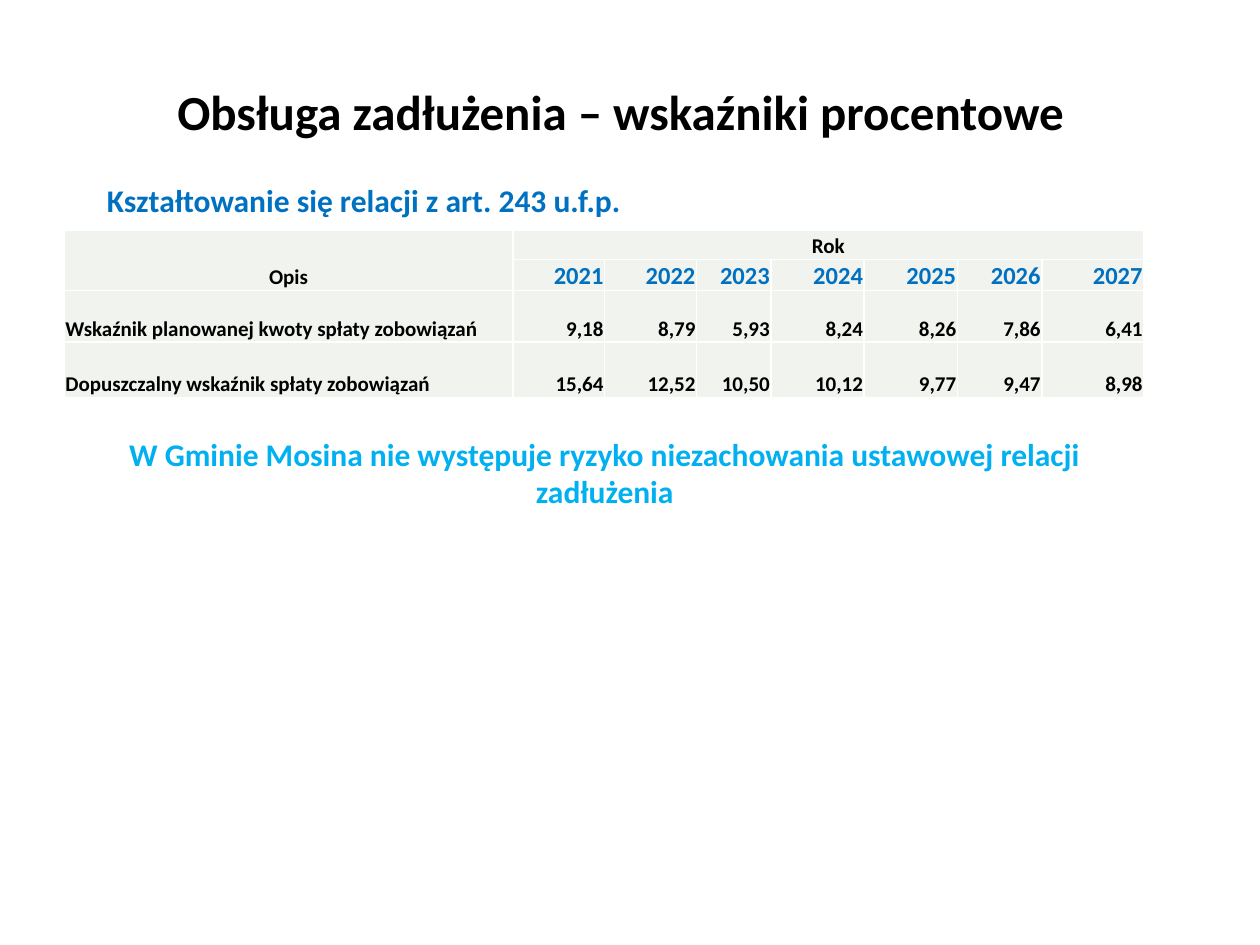
from lxml import etree
from pptx import Presentation
from pptx import util as u
from pptx.dml.color import RGBColor
from pptx.enum import text
from pptx.oxml import ns

HUES = {"ink": "000000", "blue": "0070C0", "sky": "00B0F0", "cell": "F0F3EE", "rule": "FFFFFF"}
LEFT, MID, RIGHT = text.PP_ALIGN.LEFT, text.PP_ALIGN.CENTER, text.PP_ALIGN.RIGHT
COLS = [3.56, 0.73, 0.73, 0.59, 0.74, 0.74, 0.67, 0.81]
ROWS = [0.23, 0.23, 0.41, 0.44]
DATA = [
    ["Opis", "Rok"],
    [""] + [str(year) for year in range(2021, 2028)],
    ["Wskaźnik planowanej kwoty spłaty zobowiązań",
     "9,18", "8,79", "5,93", "8,24", "8,26", "7,86", "6,41"],
    ["Dopuszczalny wskaźnik spłaty zobowiązań",
     "15,64", "12,52", "10,50", "10,12", "9,77", "9,47", "8,98"],
]


def write(frame, words, size, hue, align):
    """Put one bold run into a text frame."""
    para = frame.paragraphs[0]
    para.alignment = align
    run = para.add_run()
    run.text = words
    font = run.font
    font.name, font.size, font.bold = "Calibri", u.Pt(size), True
    font.color.rgb = RGBColor.from_string(HUES[hue])


def place(shape, box):
    """Move a shape to a box given in inches."""
    shape.left, shape.top, shape.width, shape.height = map(u.Inches, box)


def add_title(slide, box):
    """Fill and place the title."""
    title = slide.shapes.title
    place(title, box)
    frame = title.text_frame
    frame.auto_size = text.MSO_AUTO_SIZE.SHAPE_TO_FIT_TEXT
    frame.vertical_anchor = text.MSO_ANCHOR.TOP
    write(frame, "Obsługa zadłużenia – wskaźniki procentowe", 28, "ink", MID)


def add_note(slide, box, words, hue, align):
    """Add a wrapped line of text."""
    frame = slide.shapes.add_textbox(*map(u.Inches, box)).text_frame
    frame.word_wrap = True
    frame.auto_size = text.MSO_AUTO_SIZE.SHAPE_TO_FIT_TEXT
    write(frame, words, 18, hue, align)


def style(cell):
    """Set the fill, margins, anchor and rules of a cell."""
    cell.fill.solid()
    cell.fill.fore_color.rgb = RGBColor.from_string(HUES["cell"])
    cell.margin_left = cell.margin_right = cell.margin_top = u.Inches(0.01)
    cell.margin_bottom = 0
    cell.vertical_anchor = text.MSO_ANCHOR.BOTTOM
    props = cell._tc.get_or_add_tcPr()
    for spot, side in enumerate(("lnL", "lnR", "lnT", "lnB")):
        line = etree.Element(ns.qn(f"a:{side}"), w=str(u.Pt(1)))
        fill = etree.SubElement(line, ns.qn("a:solidFill"))
        etree.SubElement(fill, ns.qn("a:srgbClr"), val=HUES["rule"])
        props.insert(spot, line)


def add_grid(slide, box):
    """Add the table of ratios by year."""
    grid = slide.shapes.add_table(len(ROWS), len(COLS), *map(u.Inches, box)).table
    grid.first_row = grid.horz_banding = False
    for col, width in zip(grid.columns, COLS):
        col.width = u.Inches(width)
    for row, height in zip(grid.rows, ROWS):
        row.height = u.Inches(height)
    for cell in grid.iter_cells():
        style(cell)
    grid.cell(0, 0).merge(grid.cell(1, 0))
    grid.cell(0, 1).merge(grid.cell(0, len(COLS) - 1))
    for r, row in enumerate(DATA):
        size, hue = (14, "blue") if r == 1 else (12, "ink")
        for c, words in enumerate(row):
            if words:
                align = MID if r == 0 else RIGHT if c else LEFT
                write(grid.cell(r, c).text_frame, words, size, hue, align)


def main():
    """Build and save the slide."""
    deck = Presentation()
    deck.slide_width, deck.slide_height = u.Inches(10), u.Inches(7.5)
    slide = deck.slides.add_slide(deck.slide_layouts.get_by_name("Title Only"))
    add_title(slide, (0.75, 0.6, 8.35, 0.57))
    add_note(slide, (0.75, 1.39, 5, 0.4),
             "Kształtowanie się relacji z art. 243 u.f.p.", "blue", LEFT)
    add_grid(slide, (0.51, 1.83, sum(COLS), sum(ROWS)))
    add_note(slide, (0.51, 3.4, 8.58, 0.71),
             "W Gminie Mosina nie występuje ryzyko niezachowania ustawowej relacji zadłużenia",
             "sky", MID)
    deck.save("out.pptx")


if __name__ == "__main__":
    main()
